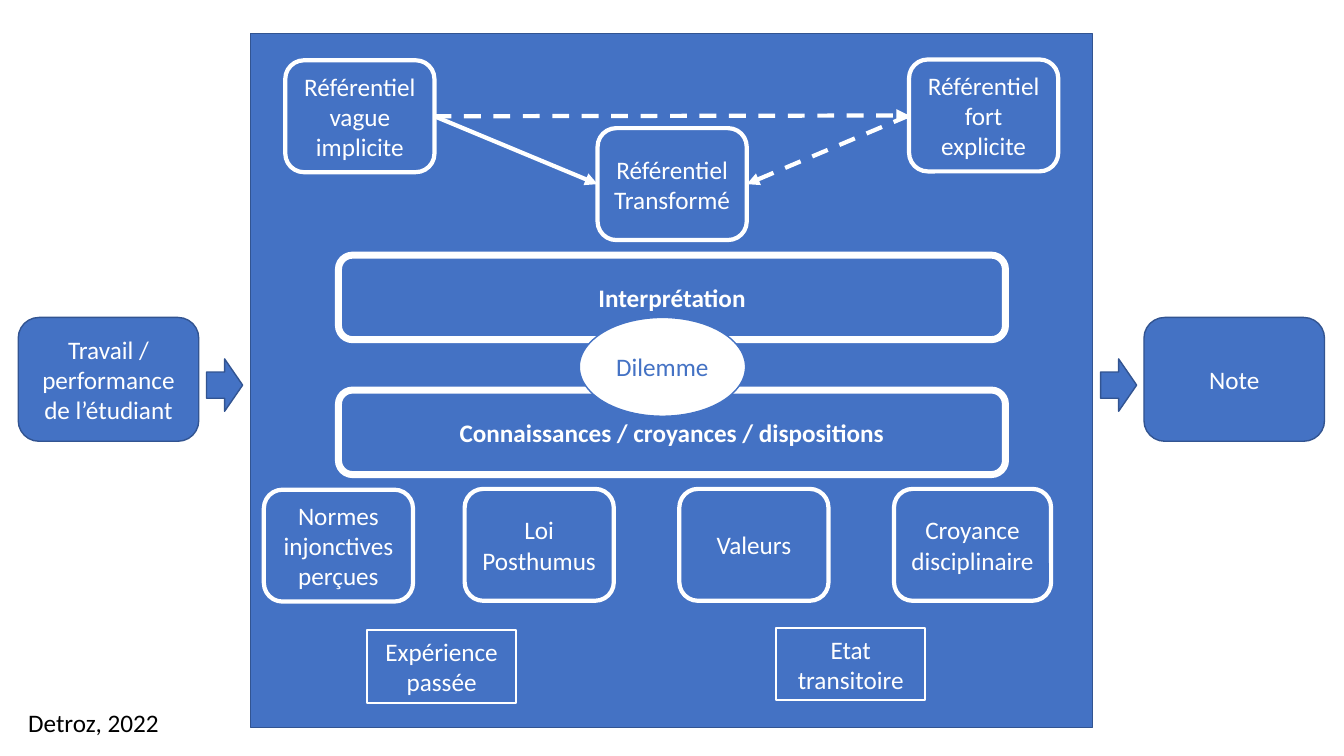
from dataclasses import dataclass

from lxml.etree import SubElement
from pptx import Presentation
from pptx.dml.color import RGBColor as RGB
from pptx.enum.dml import MSO_LINE as DASH
from pptx.enum.shapes import MSO_CONNECTOR as CONNECTOR, MSO_SHAPE as SHAPE
from pptx.enum.text import MSO_ANCHOR as ANCHOR, MSO_AUTO_SIZE as AUTO_SIZE, PP_ALIGN as ALIGN
from pptx.oxml.ns import qn
from pptx.util import Cm, Pt


@dataclass(frozen=True)
class Theme:
    blue: RGB = RGB(0x44, 0x72, 0xC4)
    navy: RGB = RGB(0x32, 0x54, 0x91)
    white: RGB = RGB(0xFF, 0xFF, 0xFF)
    black: RGB = RGB(0x00, 0x00, 0x00)
    font: str = "Calibri"
    size: int = 18
    hairline: float = 1
    outline: float = 1.5
    strong: float = 3
    heavy: float = 5


theme = Theme()


def write(frame, text, color, align, bold=False):
    frame.text = text
    font_format = {"name": theme.font, "size": Pt(theme.size), "bold": bold}
    for paragraph in frame.paragraphs:
        paragraph.alignment = align
        for run in paragraph.runs:
            for attribute, value in font_format.items():
                setattr(run.font, attribute, value)
            run.font.color.rgb = color


def add_box(kind, left, top, width, height, text="", line=theme.white,
            weight=theme.strong, fill=theme.blue, color=theme.white, bold=False):
    box = slide.shapes.add_shape(kind, Cm(left), Cm(top), Cm(width), Cm(height))
    box.shadow.inherit = False
    box.fill.solid()
    box.fill.fore_color.rgb = fill
    box.line.color.rgb = line
    box.line.width = Pt(weight)
    if text:
        box.text_frame.word_wrap = True
        box.text_frame.vertical_anchor = ANCHOR.MIDDLE
        write(box.text_frame, text, color, ALIGN.CENTER, bold)
    return box


deck = Presentation()
deck.slide_width, deck.slide_height = Cm(33.87), Cm(19.05)
slide = deck.slides.add_slide(deck.slide_layouts[6])

frame_format = {"line": theme.navy, "weight": theme.hairline}
add_box(SHAPE.RECTANGLE, 6.32, 0.84, 21.21, 17.5, **frame_format)
for left, text in ((0.46, "Travail / performance de l’étudiant"), (28.83, "Note")):
    add_box(SHAPE.ROUNDED_RECTANGLE, left, 8, 4.55, 3.12, text, **frame_format)
for left in (5, 27.53):
    flow = add_box(SHAPE.UP_ARROW, left, 9.25, 1.32, 0.91, **frame_format)
    flow.rotation = 90

for top, text in ((6.43, "Interprétation"), (9.83, "Connaissances / croyances / dispositions")):
    add_box(SHAPE.ROUNDED_RECTANGLE, 8.53, top, 16.81, 2.13, text, weight=theme.heavy, bold=True)

vague, strong, transformed = [
    add_box(SHAPE.ROUNDED_RECTANGLE, left, top, 3.76, 2.82, text)
    for left, top, text in (
        (7.19, 1.52, "Référentiel\nvague\nimplicite"),
        (22.91, 1.5, "Référentiel\nfort\nexplicite"),
        (15.06, 3.23, "Référentiel\nTransformé"),
    )
]

for source, source_side, target, target_side, dash in (
    (vague, 3, transformed, 1, None),
    (vague, 3, strong, 1, DASH.DASH),
    (strong, 1, transformed, 3, DASH.DASH),
):
    link = slide.shapes.add_connector(CONNECTOR.STRAIGHT, 0, 0, 0, 0)
    link.begin_connect(source, source_side)
    link.end_connect(target, target_side)
    link.line.color.rgb = theme.white
    link.line.width = Pt(theme.strong)
    link.line.dash_style = dash
    SubElement(link.line._get_or_add_ln(), qn("a:tailEnd"), type="triangle")
    SubElement(link._element.spPr, qn("a:effectLst"))

for left, top, width, text in (
    (6.65, 12.34, 3.76, "Normes injonctives perçues"),
    (11.71, 12.32, 3.76, "Loi Posthumus"),
    (17.12, 12.32, 3.76, "Valeurs"),
    (22.53, 12.32, 3.96, "Croyance disciplinaire"),
):
    add_box(SHAPE.ROUNDED_RECTANGLE, left, top, width, 2.82, text)

for left, top, text in ((9.25, 15.88, "Expérience passée"), (19.56, 15.82, "Etat transitoire")):
    add_box(SHAPE.RECTANGLE, left, top, 3.76, 1.83, text, weight=theme.outline)

add_box(SHAPE.OVAL, 14.6, 8, 4.19, 2.49, "Dilemme", line=theme.blue,
        weight=theme.hairline, fill=theme.white, color=theme.blue)

citation = slide.shapes.add_textbox(Cm(0.46), Cm(17.7), Cm(3.84), Cm(1.02)).text_frame
citation.word_wrap = False
citation.auto_size = AUTO_SIZE.SHAPE_TO_FIT_TEXT
write(citation, "Detroz, 2022", theme.black, ALIGN.LEFT)

deck.save("out.pptx")
